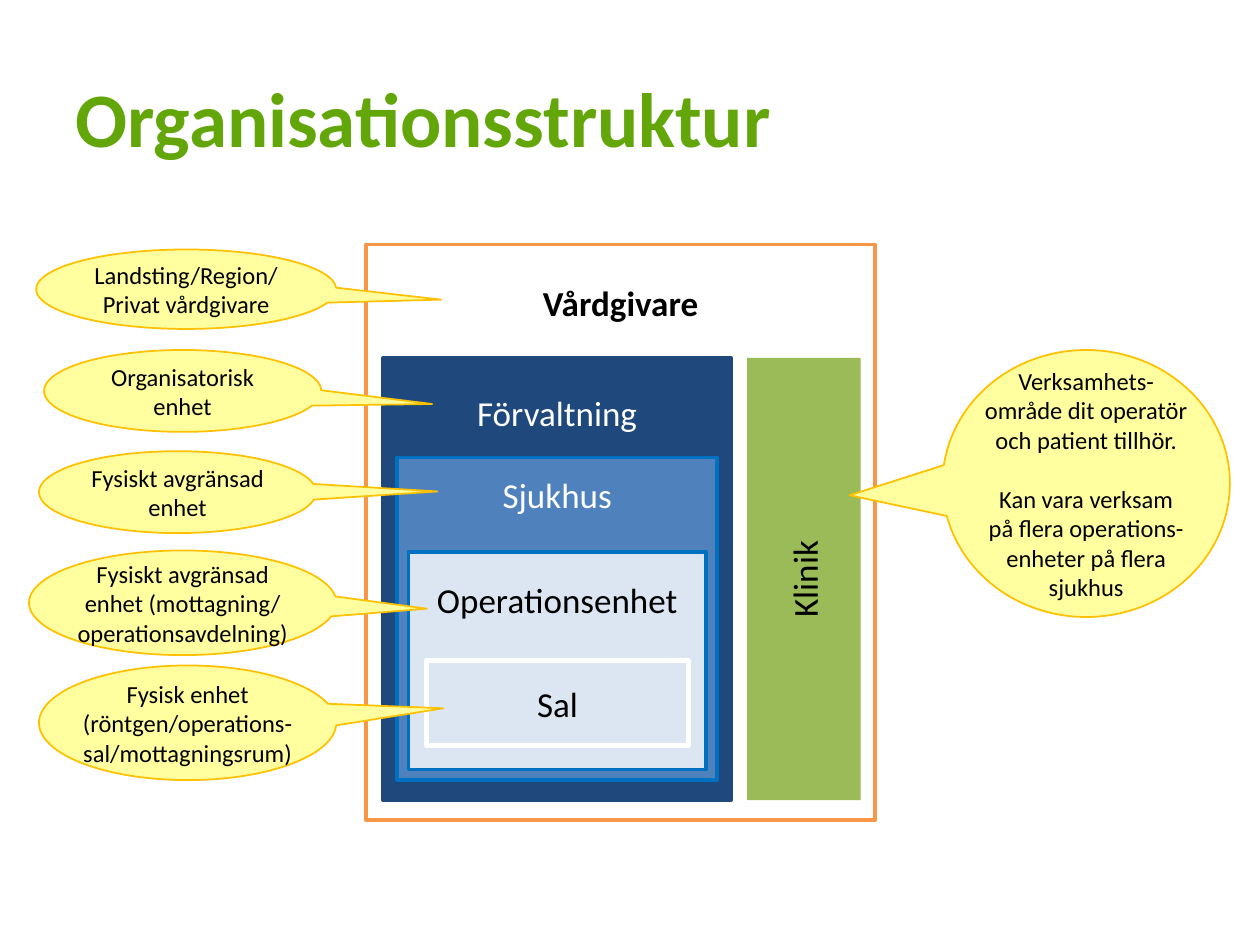
from pptx import Presentation
from pptx.dml.color import RGBColor
from pptx.enum.shapes import MSO_SHAPE
from pptx.enum.text import MSO_ANCHOR, PP_ALIGN
from pptx.util import Pt


def color(value):
    return RGBColor.from_string(value)


def add_box(kind, place, fill, line, line_width, text, size, text_color):
    """Add a filled shape with centred text and no inner margins."""
    box = page.shapes.add_shape(kind, *[Pt(length) for length in place])
    box.shadow.inherit = False
    box.fill.solid()
    box.fill.fore_color.rgb = color(fill)
    if line:
        box.line.color.rgb = color(line)
        box.line.width = Pt(line_width)
    else:
        box.line.fill.background()
    frame = box.text_frame
    frame.word_wrap = True
    frame.vertical_anchor = MSO_ANCHOR.MIDDLE
    frame.margin_left = frame.margin_right = Pt(0)
    frame.margin_top = frame.margin_bottom = Pt(0)
    frame.text = text
    for para in frame.paragraphs:
        para.alignment = PP_ALIGN.CENTER
        para.font.name = "Calibri"
        para.font.size = Pt(size)
        para.font.color.rgb = color(text_color)
    return box


deck = Presentation()
deck.slide_width, deck.slide_height = Pt(720), Pt(540)
page = deck.slides.add_slide(deck.slide_layouts[6])

# Title
title = page.shapes.add_textbox(Pt(36), Pt(21.6), Pt(648), Pt(90))
title.text_frame.word_wrap = True
title.text_frame.vertical_anchor = MSO_ANCHOR.MIDDLE
para = title.text_frame.paragraphs[0]
para.text = "Organisationsstruktur"
para.font.name = "Calibri"
para.font.size = Pt(44)
para.font.bold = True
para.font.color.rgb = color("62A60A")

# Nested levels: name, place, fill, line, line width, text colour, space above text
levels = [
    ("Vårdgivare", (209.2, 139.6, 290.9, 329), "FFFFFF", "F79646", 2, "000000", 21),
    ("Förvaltning", (218.9, 204.5, 198.9, 252.7), "1F497D", "1F497D", 2, "FFFFFF", 19),
    ("Sjukhus", (227, 261.4, 182.9, 184.3), "4F81BD", "0070C0", 2, "FFFFFF", 9),
    ("Operationsenhet", (233.5, 315.4, 169.9, 124.4), "DCE6F2", "0070C0", 2, "000000", 15),
    ("Sal", (243.9, 377.4, 149.4, 48.7), "DCE6F2", "FFFFFF", 3, "000000", None),
    ("Klinik", (427, 204.5, 64.8, 252.7), "9BBB59", None, 0, "000000", None),
]
for name, place, fill, line, line_width, text_color, space in levels:
    level = add_box(MSO_SHAPE.RECTANGLE, place, fill, line, line_width, name, 20, text_color)
    frame = level.text_frame
    if space:
        frame.vertical_anchor = MSO_ANCHOR.TOP
        frame.margin_top = Pt(space)
    if name == "Vårdgivare":
        frame.paragraphs[0].font.bold = True
    if name == "Klinik":
        frame._txBody.bodyPr.set("vert", "vert270")

# Callouts: text, place, pointer tip relative to the centre
callouts = [
    ("Landsting/Region/\vPrivat vårdgivare", (20.7, 142.6, 171.4, 45.4), (0.85, 0.131)),
    ("Organisatorisk\venhet", (25.2, 200, 158.4, 46.8), (0.9, 0.159)),
    ("Fysiskt avgränsad enhet", (22.3, 257.8, 158.4, 46.8), (0.938, -0.008)),
    ("Fysiskt avgränsad enhet (mottagning/\noperationsavdelning)",
     (16.6, 314.6, 175.7, 59.8), (0.794, 0.056)),
    ("Fysisk enhet (röntgen/operations-sal/mottagningsrum)",
     (22.3, 380.3, 169.9, 65.5), (0.86, -0.127)),
    ("Verksamhets-\vområde dit operatör och patient tillhör.\n"
     "Kan vara verksam på flera operations-enheter på flera sjukhus",
     (538.6, 200, 164.2, 152.6), (-0.824, 0.044)),
]
for text, place, tip in callouts:
    callout = add_box(MSO_SHAPE.OVAL_CALLOUT, place, "FFFF9F", "FFC000", 1, text, 14, "000000")
    callout.adjustments[0], callout.adjustments[1] = tip

# Gap between the two statements in the last callout
callout.text_frame.paragraphs[1].space_before = Pt(17)

deck.save("out.pptx")
